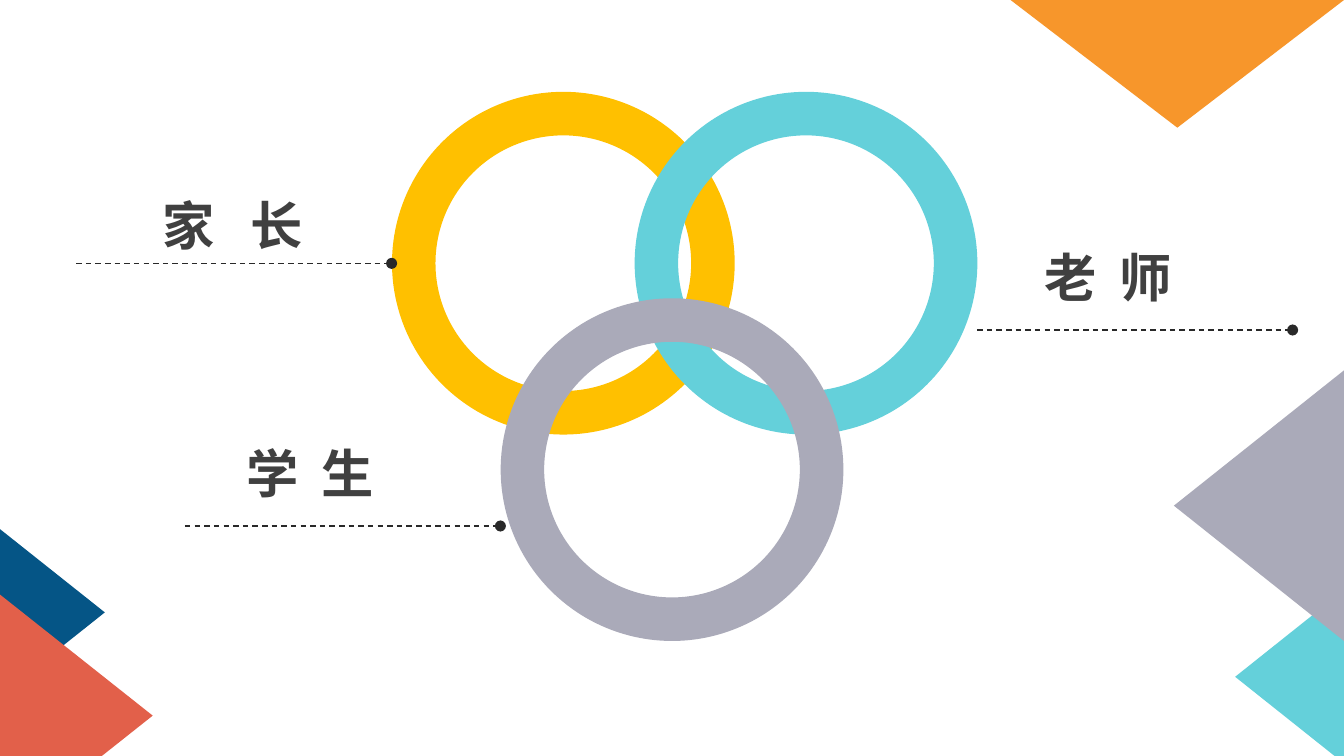
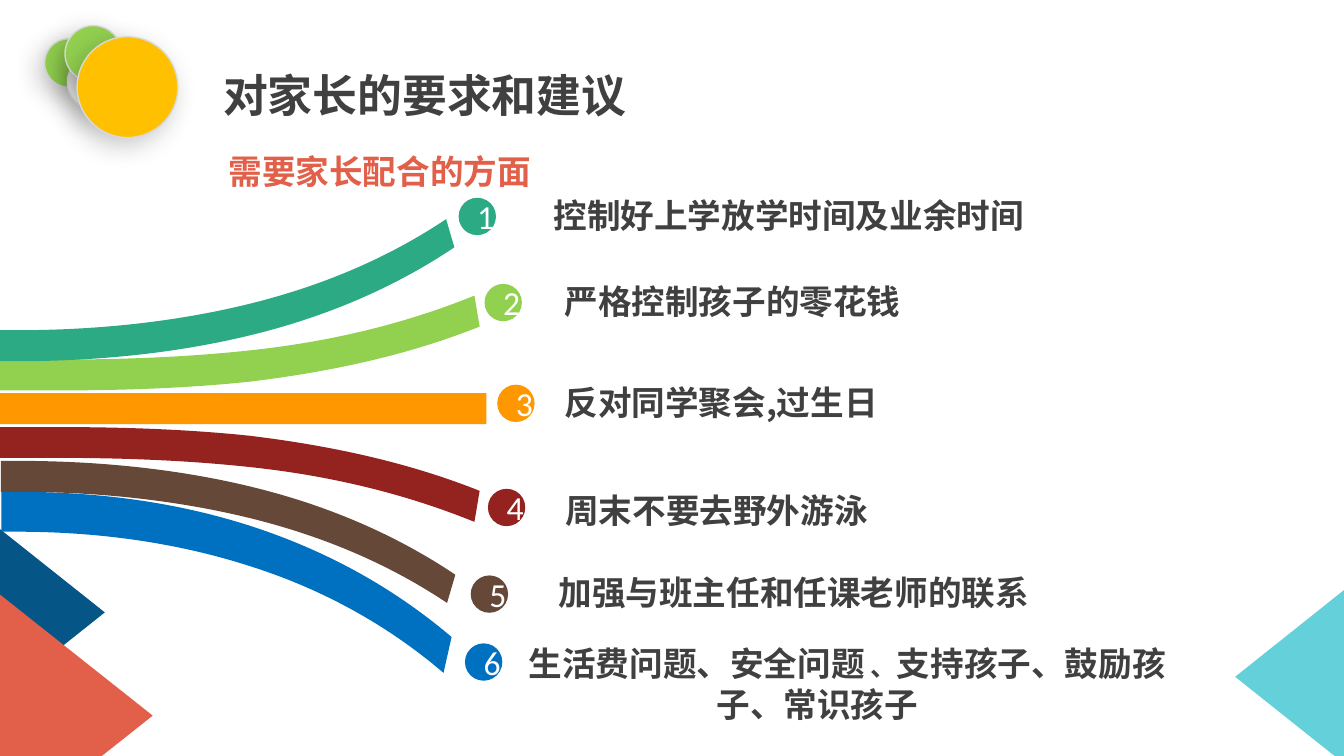
from typing import NamedTuple, Optional

from lxml.etree import SubElement
from pptx import Presentation
from pptx.dml.color import RGBColor
from pptx.enum.dml import MSO_LINE
from pptx.enum.shapes import MSO_CONNECTOR, MSO_SHAPE as Preset
from pptx.enum.text import MSO_AUTO_SIZE, PP_ALIGN as Align
from pptx.oxml.ns import qn
from pptx.util import Pt

COLORS = {
    "orange": "F7962B", "navy": "055586", "coral": "E2604A", "cyan": "64D0DA",
    "lilac": "AAAAB9", "gold": "FFC000", "dash": "292929", "ink": "404040",
    "rim": "D9D9D9", "silver": "BFBFBF", "pale": "F5F5F5", "white": "FFFFFF",
    "black": "000000", "teal": "2CAA83", "lime": "92D050", "amber": "FF9700",
    "wine": "942320", "brown": "664838", "blue": "0070C0",
}
CJK_FONT = "Noto Sans CJK SC"
RING_SIZE = 183.6
LEADER_LENGTH = 169
BADGE_SIZE = 20
CURVE_STARTS = (1, 4, 8, 11)


class Triangle(NamedTuple):
    left: float
    top: float
    width: float
    height: float
    rotation: int
    color: str


class Ring(NamedTuple):
    left: float
    top: float
    color: str


class Leader(NamedTuple):
    left: float
    top: float


class Label(NamedTuple):
    text: str
    left: float
    top: float
    width: float
    height: float
    size: float = 18
    color: str = "ink"
    tracking: float = 0
    wrap: bool = False
    align: Optional[Align] = None
    line_spacing: Optional[float] = None


class Ribbon(NamedTuple):
    left: float
    upper: list
    lower: list
    color: str


class Bubble(NamedTuple):
    left: float
    top: float
    size: float
    color: str


class Badge(NamedTuple):
    left: float
    top: float
    color: str


CORNERS = [
    Triangle(-19.2, 299, 92.5, 58.2, 90, "navy"),
    Triangle(-28.1, 340.9, 134.8, 85, 90, "coral"),
    Triangle(644.4, 333.4, 92.9, 58.3, 270, "cyan"),
]
EXTRA_TRIANGLES = [
    Triangle(541.4, 0, 178.6, 68.4, 180, "orange"),
    Triangle(601.9, 225.2, 145.4, 91.4, 270, "lilac"),
]
RINGS = [Ring(210, 49.2, "gold"), Ring(340, 49.2, "cyan"), Ring(268.2, 159.8, "lilac")]
LEADERS = [Leader(40.8, 141.1), Leader(99.1, 281.8), Leader(523.5, 176.8)]
ROLES = [
    Label("老 师", 552.5, 127.7, 87, 41, 28, tracking=3),
    Label("学 生", 125, 232.6, 87, 41, 28, tracking=3),
    Label("家 长", 79.9, 100.1, 96, 41, 28, tracking=6.4),
]

HEADINGS = [
    Label("对家长的要求和建议", 112.5, 32.5, 230.4, 36, 24),
    Label("需要家长配合的方面", 115.3, 77.3, 176.4, 29, color="coral"),
]
ADVICE = [
    Label(text, left, top, width, 39, wrap=True, align=Align.JUSTIFY, line_spacing=1.5)
    for text, left, top, width in [
        ("控制好上学放学时间及业余时间", 289.4, 90, 334),
        ("严格控制孩子的零花钱", 295.3, 136.1, 311),
        ("反对同学聚会,过生日", 295.3, 190.1, 311),
        ("周末不要去野外游泳", 295.7, 247.9, 311),
    ]
] + [Label("加强与班主任和任课老师的联系", 292.1, 303.1, 326, 29, wrap=True)]
CLOSING = Label("", 238.4, 341, 398.9, 84.2, wrap=True, align=Align.CENTER)
CLOSING_SPANS = [("生活费问题、安全问题", 18), (" 、", 14),
                 ("支持孩子、鼓励孩子、常识孩子", 18)]
CLOSING_INDENT = 32
BADGES = [
    Badge(245.7, 106, "teal"), Badge(259.6, 152.1, "lime"),
    Badge(266.4, 206.1, "amber"), Badge(261.4, 261.9, "wine"),
    Badge(252.2, 308.3, "brown"), Badge(249.1, 344.7, "blue"),
]
BUBBLES = [
    Bubble(23.9, 20.8, 25.9, "lime"), Bubble(36.1, 28.9, 30.2, "silver"),
    Bubble(34.8, 13.7, 30.2, "lime"), Bubble(41.3, 19.7, 54, "gold"),
]

TEAL_RIBBON = Ribbon(
    0,
    [(8.6, 176.9), (50.4, 176.9), (92.9, 172.8), (133.9, 162.7),
     (171.4, 153.4), (206.6, 139), (239, 117.4)],
    [(8.6, 193.5), (51.1, 193.5), (94.3, 189.4), (135.4, 179.3),
     (173.5, 169.9), (210.2, 154.8), (243.4, 132.5)], "teal")
LIME_RIBBON = Ribbon(
    0,
    [(28.8, 192.7), (64.1, 192.7), (98.6, 191.5), (132.5, 187.9),
     (174.2, 183.6), (215.3, 174.2), (254.2, 158.4)],
    [(29.5, 209.2), (64.8, 209.2), (99.4, 208.1), (133.9, 204.5),
     (175.7, 199.4), (217.4, 190.8), (257, 175)], "lime")
BLUE_RIBBON = Ribbon(
    0.7,
    [(9.4, 263.5), (51.1, 263.5), (93.6, 268.6), (135.4, 282.2),
     (172.8, 294.5), (208.8, 313.2), (241.9, 341.3)],
    [(9.4, 284.9), (50.4, 284.9), (92.9, 290.2), (133.2, 303.1),
     (169.9, 314.6), (205.9, 333.4), (237.6, 360.5)], "blue")


def rgb(name: str) -> RGBColor:
    return RGBColor.from_string(COLORS[name])


def paint(shape, color: str) -> None:
    shape.shadow.inherit = False
    shape.fill.solid()
    shape.fill.fore_color.rgb = rgb(color)
    shape.line.fill.background()


def add_preset(shapes, preset: Preset, left: float, top: float,
               width: float, height: float, color: str):
    shape = shapes.add_shape(preset, Pt(left), Pt(top), Pt(width), Pt(height))
    paint(shape, color)
    return shape


def add_triangle(page, item: Triangle) -> None:
    shape = add_preset(page.shapes, Preset.ISOSCELES_TRIANGLE, item.left, item.top,
                       item.width, item.height, item.color)
    shape.rotation = item.rotation


def add_ring(page, item: Ring) -> None:
    shape = add_preset(page.shapes, Preset.DONUT, item.left, item.top,
                       RING_SIZE, RING_SIZE, item.color)
    shape.adjustments[0] = 0.127


def add_leader(page, item: Leader) -> None:
    leader = page.shapes.add_connector(
        MSO_CONNECTOR.STRAIGHT, Pt(item.left), Pt(item.top),
        Pt(item.left + LEADER_LENGTH), Pt(item.top))
    leader.line.color.rgb = rgb("dash")
    leader.line.width = Pt(0.75)
    leader.line.dash_style = MSO_LINE.DASH
    properties = leader._element.spPr
    SubElement(properties.find(qn("a:ln")), qn("a:tailEnd"), type="oval")
    SubElement(properties, qn("a:effectLst"))


def add_label(page, item: Label):
    box = page.shapes.add_textbox(Pt(item.left), Pt(item.top),
                                  Pt(item.width), Pt(item.height))
    frame = box.text_frame
    frame.word_wrap = item.wrap
    frame.auto_size = MSO_AUTO_SIZE.SHAPE_TO_FIT_TEXT
    para = frame.paragraphs[0]
    if item.text:
        para.add_run().text = item.text
    para.alignment = item.align
    para.line_spacing = item.line_spacing
    para.font.size = Pt(item.size)
    para.font.bold = True
    para.font.name = CJK_FONT
    para.font.color.rgb = rgb(item.color)
    defaults = para._p.pPr.find(qn("a:defRPr"))
    SubElement(defaults, qn("a:ea"), typeface=CJK_FONT)
    if item.tracking:
        defaults.set("spc", str(round(item.tracking * 100)))
    return para


def add_closing(page) -> None:
    para = add_label(page, CLOSING)
    para._p.pPr.set("indent", str(Pt(CLOSING_INDENT)))
    for text, size in CLOSING_SPANS:
        span = para.add_run()
        span.text = text
        span.font.size = Pt(size)


def add_badge(page, number: int, item: Badge) -> None:
    shape = add_preset(page.shapes, Preset.OVAL, item.left, item.top,
                       BADGE_SIZE, BADGE_SIZE, item.color)
    para = shape.text_frame.paragraphs[0]
    para.add_run().text = str(number)
    para.alignment = Align.CENTER
    para.font.size = Pt(18)
    para.font.name = "Calibri"
    para.font.color.rgb = rgb("white")


def add_bubble(group, item: Bubble) -> None:
    shape = add_preset(group.shapes, Preset.OVAL, item.left, item.top,
                       item.size, item.size, item.color)
    if item.color == "silver":
        shape.fill.gradient()
        shape.fill.gradient_angle = 230
        for stop, color in zip(shape.fill.gradient_stops, ("silver", "pale")):
            stop.color.rgb = rgb(color)
    shape.line.color.rgb = rgb("rim")
    shape.line.width = Pt(0.75)
    effects = shape._element.spPr.find(qn("a:effectLst"))
    shadow = SubElement(effects, qn("a:outerShdw"), blurRad=str(Pt(14)),
                        dist=str(Pt(5)), dir=str(130 * 60000))
    tint = SubElement(shadow, qn("a:srgbClr"), val=COLORS["black"])
    SubElement(tint, qn("a:alpha"), val="22000")


def mirror(ribbon: Ribbon, axis: float, shift: float, color: str) -> Ribbon:
    def flip(points: list) -> list:
        return [(x + shift, 2 * axis - y) for x, y in points]
    return Ribbon(ribbon.left + shift, flip(ribbon.lower), flip(ribbon.upper), color)


def bend(shape) -> None:
    segments = list(shape._element.spPr.iter(qn("a:lnTo")))
    for start in CURVE_STARTS:
        first, *others = segments[start:start + 3]
        first.tag = qn("a:cubicBezTo")
        for segment in others:
            first.append(segment[0])
            segment.getparent().remove(segment)


def add_ribbon(page, item: Ribbon) -> None:
    upper = [(item.left, item.upper[0][1])] + item.upper
    lower = [(item.left, item.lower[0][1])] + item.lower
    outline = [(Pt(x), Pt(y)) for x, y in upper + lower[::-1]]
    builder = page.shapes.build_freeform(*outline[0])
    builder.add_line_segments(outline[1:], close=True)
    shape = builder.convert_to_shape()
    bend(shape)
    paint(shape, item.color)


def build_rings(page) -> None:
    for triangle in CORNERS + EXTRA_TRIANGLES:
        add_triangle(page, triangle)
    for ring in RINGS:
        add_ring(page, ring)
    for leader in LEADERS:
        add_leader(page, leader)
    for role in ROLES:
        add_label(page, role)


def build_advice(page) -> None:
    add_ribbon(page, BLUE_RIBBON)
    for triangle in CORNERS:
        add_triangle(page, triangle)
    group = page.shapes.add_group_shape()
    for bubble in BUBBLES:
        add_bubble(group, bubble)
    for label in HEADINGS + ADVICE:
        add_label(page, label)
    for number, badge in enumerate(BADGES, start=1):
        add_badge(page, number, badge)
    add_preset(page.shapes, Preset.RECTANGLE, 0, 210.6, 260.6, 16.6, "amber")
    for ribbon in (LIME_RIBBON, TEAL_RIBBON, mirror(LIME_RIBBON, 219, 0, "wine"),
                   mirror(TEAL_RIBBON, 220.2, 0.5, "brown")):
        add_ribbon(page, ribbon)
    add_closing(page)


def main() -> None:
    deck = Presentation()
    deck.slide_width, deck.slide_height = Pt(720), Pt(405)
    for build in (build_rings, build_advice):
        build(deck.slides.add_slide(deck.slide_layouts[6]))
    deck.save("out.pptx")


if __name__ == "__main__":
    main()
